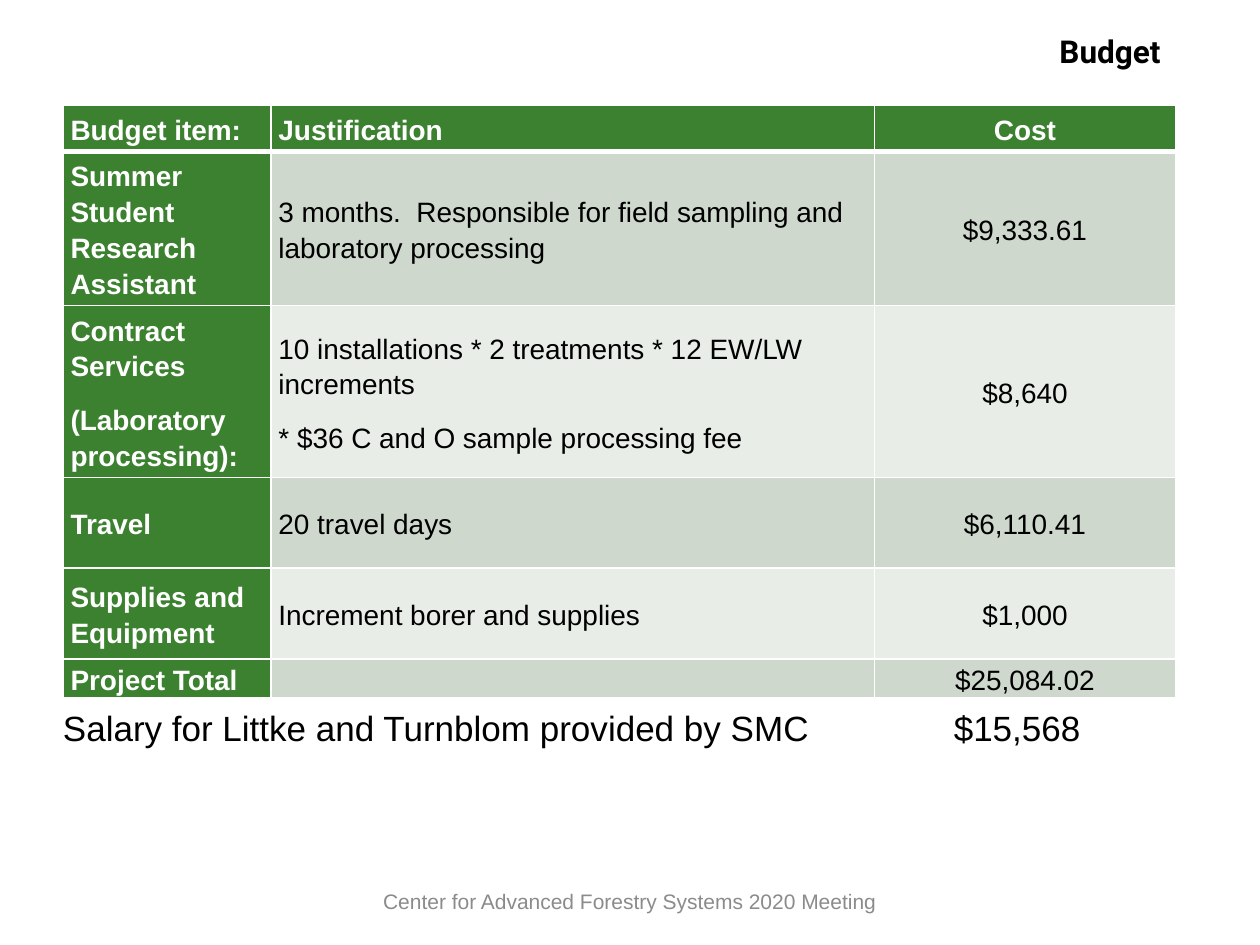
from dataclasses import dataclass

from lxml.etree import SubElement
from pptx import Presentation
from pptx.dml.color import RGBColor
from pptx.enum.text import MSO_ANCHOR as Anchor, PP_ALIGN as Align
from pptx.oxml import parse_xml
from pptx.oxml.ns import nsdecls, qn
from pptx.util import Inches, Pt

GREEN, WHITE, BLACK, GREY = "3B812F", "FFFFFF", "000000", "8B8B8B"
BANDS = ("CED8CD", "E8EDE8")
COLUMNS = (0.165, 0.479, 0.239)
ROWS = (0.049, 0.104, 0.16, 0.096, 0.096, 0.039)
BUDGET = (
    ("Budget item:", "Justification", "Cost"),
    ("Summer Student Research Assistant",
     "3 months.  Responsible for field sampling and laboratory processing",
     "$9,333.61"),
    ("Contract Services\n(Laboratory processing):",
     "10 installations * 2 treatments * 12 EW/LW increments\n"
     "* $36 C and O sample processing fee",
     "$8,640"),
    ("Travel", "20 travel days", "$6,110.41"),
    ("Supplies and Equipment", "Increment borer and supplies", "$1,000"),
    ("Project Total", "", "$25,084.02"),
)


def color(value):
    """Turn a hex string into a colour."""
    return RGBColor.from_string(value)


@dataclass
class BudgetPage:
    """Hold the style and the current slide."""
    deck: object
    page: object
    font: str = "Arial"

    def across(self, share):
        """Convert a share of the slide width to a length."""
        return round(self.deck.slide_width * share)

    def down(self, share):
        """Convert a share of the slide height to a length."""
        return round(self.deck.slide_height * share)

    def style(self, para, size, tint, bold=False, align=Align.LEFT, font=None):
        """Set the font and alignment of a paragraph."""
        para.alignment = align
        para.font.name = font or self.font
        para.font.size = Pt(size)
        para.font.bold = bold
        para.font.color.rgb = color(tint)

    def text(self, words, place, size, tint, anchor=Anchor.MIDDLE,
             inset=(0.1, 0.05), wrap=True, spacing=None, tab=None, **look):
        """Add a text box placed by shares of the slide."""
        left, top, width, height = place
        box = self.page.shapes.add_textbox(self.across(left), self.down(top),
                                           self.across(width), self.down(height))
        frame = box.text_frame
        frame.word_wrap = wrap
        frame.vertical_anchor = anchor
        frame.margin_left = frame.margin_right = Inches(inset[0])
        frame.margin_top = frame.margin_bottom = Inches(inset[1])
        para = frame.paragraphs[0]
        para.text = words
        if spacing:
            para.line_spacing = spacing
        if tab:
            stops = SubElement(para._p.get_or_add_pPr(), qn("a:tabLst"))
            SubElement(stops, qn("a:tab"), pos=str(self.across(tab)), algn="l")
        self.style(para, size, tint, **look)

    def borders(self, cell, top, bottom):
        """Draw white borders around a cell, widths in points."""
        sides = {"lnL": 1, "lnR": 1, "lnT": top, "lnB": bottom}
        for index, (side, width) in enumerate(sides.items()):
            cell._tc.get_or_add_tcPr().insert(index, parse_xml(
                f'<a:{side} {nsdecls("a")} w="{Pt(width)}"><a:solidFill>'
                f'<a:srgbClr val="{WHITE}"/></a:solidFill></a:{side}>'))

    def cell(self, cell, words, row, column):
        """Fill one table cell."""
        heading = row == 0 or column == 0
        cell.fill.solid()
        cell.fill.fore_color.rgb = color(GREEN if heading else BANDS[(row - 1) % 2])
        cell.vertical_anchor = Anchor.MIDDLE
        cell.margin_left = cell.margin_right = Inches(0.06)
        cell.margin_top = cell.margin_bottom = 0
        self.borders(cell, 3 if row == 1 else 1, 3 if row == 0 else 1)
        if not words:
            return
        cell.text_frame.text = words
        for para in cell.text_frame.paragraphs:
            para.line_spacing = 1.15
            para.space_after = Pt(10)
            self.style(para, 16, WHITE if heading else BLACK, heading,
                       Align.CENTER if column == 2 else Align.LEFT)

    def table(self, left, top, columns, rows, content):
        """Add a table whose columns and rows are shares of the slide."""
        table = self.page.shapes.add_table(
            len(rows), len(columns), self.across(left), self.down(top),
            self.across(sum(columns)), self.down(sum(rows))).table
        for column, share in zip(table.columns, columns):
            column.width = self.across(share)
        for row, share in zip(table.rows, rows):
            row.height = self.down(share)
        for row, line in enumerate(content):
            for column, words in enumerate(line):
                self.cell(table.cell(row, column), words, row, column)


def main():
    """Build the budget slide."""
    deck = Presentation()
    deck.slide_width, deck.slide_height = Inches(10), Inches(7.5)
    sheet = BudgetPage(deck, deck.slides.add_slide(deck.slide_layouts[6]))
    sheet.text("Center for Advanced Forestry Systems 2020 Meeting",
               (0.275, 0.927, 0.45, 0.053), 12, GREY, align=Align.CENTER)
    sheet.text("Budget", (0.71, 0.027, 0.221, 0.053), 18, BLACK, Anchor.TOP,
               wrap=False, bold=True, align=Align.RIGHT, font="Roboto")
    sheet.table(0.05, 0.111, COLUMNS, ROWS, BUDGET)
    sheet.text("Salary for Littke and Turnblom provided by SMC\t$15,568",
               (0.05, 0.731, 0.9, 0.084), 20, BLACK, inset=(0, 0),
               spacing=0.9, tab=0.707)
    deck.save("out.pptx")


if __name__ == "__main__":
    main()
